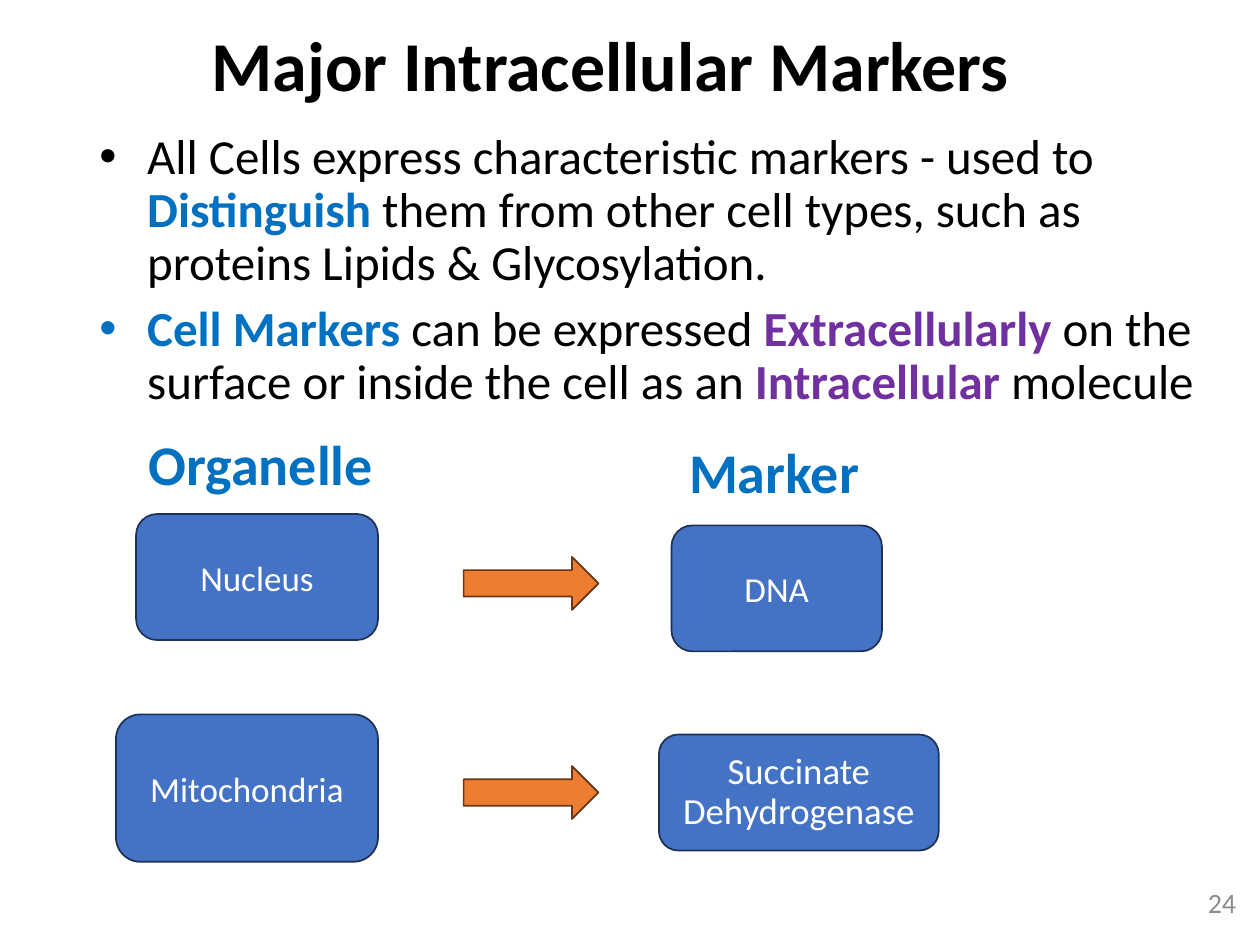
"""Build the Major Intracellular Markers slide."""
from lxml.etree import SubElement
from pptx import Presentation
from pptx.dml.color import RGBColor
from pptx.enum.shapes import MSO_SHAPE
from pptx.enum.text import MSO_ANCHOR, MSO_AUTO_SIZE, PP_ALIGN
from pptx.oxml.ns import qn
from pptx.util import Pt

EMU_PER_PX = 9144
SLIDE_SIZE = (1000, 750)
BULLET_INDENT = 38

THEME = {
    "font": "Calibri",
    "colors": {
        "ink": "000000", "blue": "0070C0", "purple": "7030A0",
        "white": "FFFFFF", "gray": "8C8C8C",
        "box": "4472C4", "box_line": "1E3256",
        "arrow": "ED7D31", "arrow_line": "683715",
    },
    "sizes": {"title": 40, "heading": 32, "body": 28, "enzyme": 21, "box": 20, "number": 16},
}

TITLE = ("Major Intracellular Markers", (158, 8, 715, 93))
BODY_FRAME = (69, 100, 923, 217)
BULLETS = [
    [("All Cells express characteristic markers - used to ", "ink"),
     ("Distinguish", "blue"),
     (" them from other cell types, such as proteins Lipids & Glycosylation.", "ink")],
    [("Cell Markers ", "blue"), ("can be expressed", "ink"),
     (" Extracellularly ", "purple"),
     ("on the surface or inside the cell as an", "ink"),
     (" Intracellular ", "purple"), ("molecule", "ink")],
]
HEADINGS = [("Organelle", (108, 336, 208, 64)), ("Marker", (537, 342, 208, 64))]
BOXES = [
    ("Nucleus", (108, 408, 192, 100), "box"),
    ("DNA", (533, 417, 167, 100), "box"),
    ("Mitochondria", (92, 567, 208, 117), "box"),
    ("Succinate Dehydrogenase", (523, 583, 222, 92), "enzyme"),
]
ARROW_LEFT, ARROW_SIZE, ARROW_TOPS = 368, (107, 42), (442, 608)
PAGE_NUMBER = ("24", (931, 683, 60, 67))


def emu(lengths):
    return [length * EMU_PER_PX for length in lengths]


def color(name):
    return RGBColor.from_string(THEME["colors"][name])


def assign(target, values):
    for name, value in values.items():
        setattr(target, name, value)


def format_frame(shape, anchor=MSO_ANCHOR.TOP):
    assign(shape.text_frame, {"word_wrap": True, "auto_size": MSO_AUTO_SIZE.NONE,
                              "vertical_anchor": anchor})


def add_run(paragraph, text, size, color_name, bold=False):
    run = paragraph.add_run()
    run.text = text
    assign(run.font, {"name": THEME["font"], "size": Pt(THEME["sizes"][size]), "bold": bold})
    run.font.color.rgb = color(color_name)


def write_line(shape, text, size, color_name, bold=False, anchor=MSO_ANCHOR.TOP, **layout):
    format_frame(shape, anchor)
    paragraph = shape.text_frame.paragraphs[0]
    assign(paragraph, {"alignment": PP_ALIGN.LEFT, **layout})
    add_run(paragraph, text, size, color_name, bold)


def add_filled_shape(slide, kind, frame, style):
    shape = slide.shapes.add_shape(kind, *emu(frame))
    shape.shadow.inherit = False
    shape.fill.solid()
    shape.fill.fore_color.rgb = color(style)
    shape.line.color.rgb = color(f"{style}_line")
    shape.line.width = Pt(1)
    return shape


def add_bullets(slide):
    shape = slide.shapes.add_textbox(*emu(BODY_FRAME))
    format_frame(shape)
    for index, runs in enumerate(BULLETS):
        frame = shape.text_frame
        paragraph = frame.add_paragraph() if index else frame.paragraphs[0]
        assign(paragraph, {"line_spacing": 0.9, "space_before": Pt(7.5 if index else 0)})
        properties = paragraph._p.get_or_add_pPr()
        indent = BULLET_INDENT * EMU_PER_PX
        properties.set("marL", str(indent))
        properties.set("indent", str(-indent))
        SubElement(properties, qn("a:buFont")).set("typeface", "Arial")
        SubElement(properties, qn("a:buChar")).set("char", "•")
        for text, color_name in runs:
            add_run(paragraph, text, "body", color_name, color_name != "ink")


def main():
    presentation = Presentation()
    presentation.slide_width, presentation.slide_height = emu(SLIDE_SIZE)
    slide = presentation.slides.add_slide(presentation.slide_layouts[5])

    text, frame = TITLE
    title = slide.shapes.title
    assign(title, dict(zip(("left", "top", "width", "height"), emu(frame))))
    write_line(title, text, "title", "ink", True, MSO_ANCHOR.MIDDLE, line_spacing=0.9)
    add_bullets(slide)

    for text, frame in HEADINGS:
        write_line(slide.shapes.add_textbox(*emu(frame)), text, "heading", "blue", True)
    for text, frame, size in BOXES:
        box = add_filled_shape(slide, MSO_SHAPE.ROUNDED_RECTANGLE, frame, "box")
        spacing = 0.9 if size == "enzyme" else 1.0
        write_line(box, text, size, "white", anchor=MSO_ANCHOR.MIDDLE,
                   alignment=PP_ALIGN.CENTER, line_spacing=spacing)
    for top in ARROW_TOPS:
        add_filled_shape(slide, MSO_SHAPE.RIGHT_ARROW, (ARROW_LEFT, top, *ARROW_SIZE), "arrow")

    text, frame = PAGE_NUMBER
    write_line(slide.shapes.add_textbox(*emu(frame)), text, "number", "gray",
               anchor=MSO_ANCHOR.MIDDLE, alignment=PP_ALIGN.RIGHT)
    presentation.save("out.pptx")


if __name__ == "__main__":
    main()
